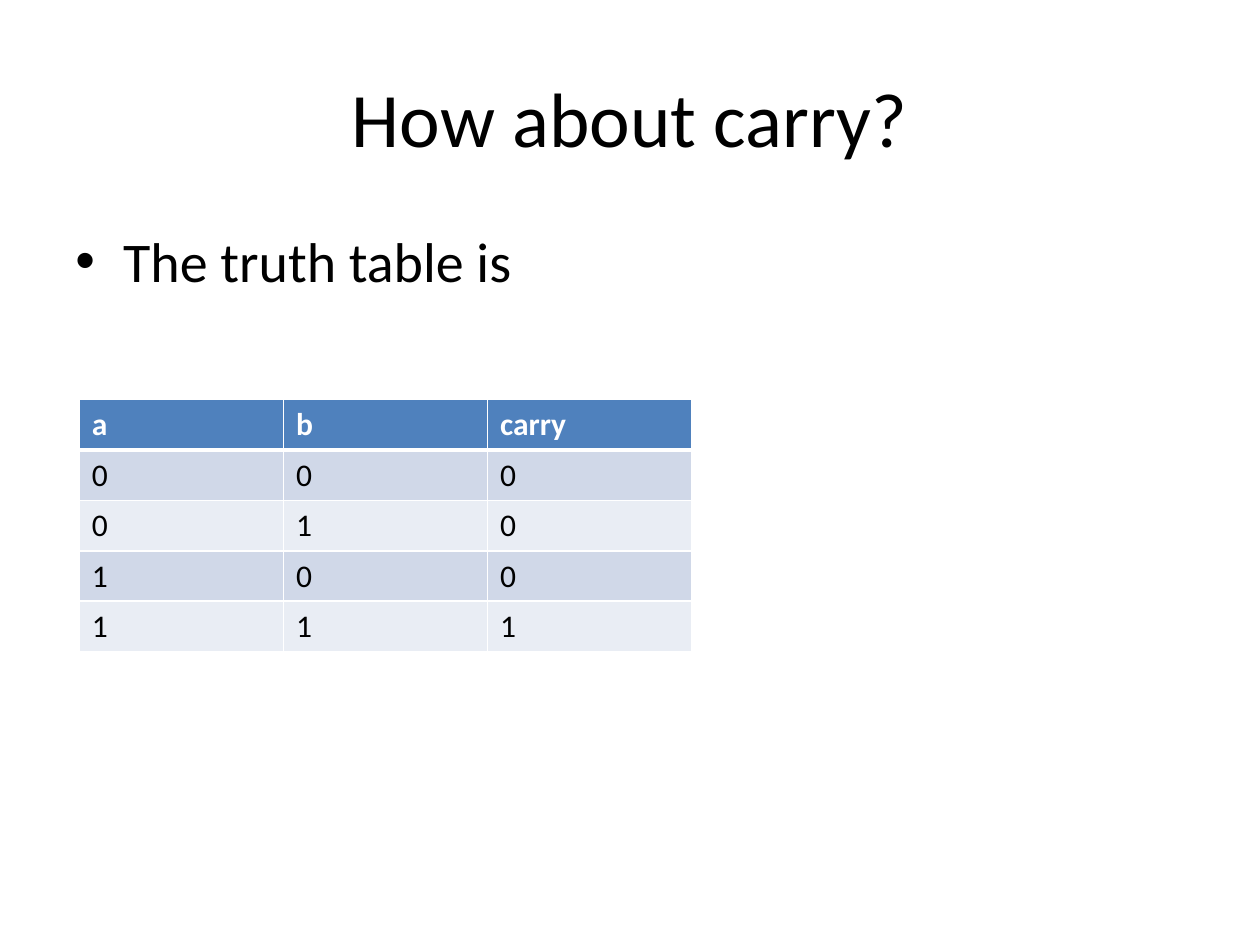
import lxml.etree
import pptx
import pptx.dml.color
import pptx.enum.text
import pptx.oxml.ns
import pptx.util

Inches = pptx.util.Inches
Pt = pptx.util.Pt
ALIGN = pptx.enum.text.PP_ALIGN
ANCHOR = pptx.enum.text.MSO_ANCHOR

COLORS = {
    "text": "000000",
    "white": "FFFFFF",
    "header": "4F81BD",
    "odd": "D0D8E8",
    "even": "E9EDF4",
}
FONT = "Calibri"
TRUTH_TABLE = [
    ("a", "b", "carry"),
    (0, 0, 0),
    (0, 1, 0),
    (1, 0, 0),
    (1, 1, 1),
]


class SlideBuilder:
    def __init__(self, page):
        self.page = page

    def color(self, name):
        return pptx.dml.color.RGBColor.from_string(COLORS[name])

    def style(self, target, formats):
        for name, value in formats.items():
            setattr(target, name, value)

    def child(self, parent, tag, **attributes):
        return lxml.etree.SubElement(parent, pptx.oxml.ns.qn(tag), attributes)

    def add_span(self, para, text, size, color="text", bold=False):
        span = para.add_run()
        span.text = str(text)
        self.style(span.font, {"name": FONT, "size": Pt(size), "bold": bold})
        span.font.color.rgb = self.color(color)

    def text_box(self, place, text, size, frame_format, para_format):
        box = self.page.shapes.add_textbox(*map(Inches, place))
        self.style(box.text_frame, {"word_wrap": True, **frame_format})
        para = box.text_frame.paragraphs[0]
        self.style(para, para_format)
        self.add_span(para, text, size)
        return para

    def title(self, text):
        self.text_box((0.5, 0.3, 9, 1.25), text, 44,
                      {"vertical_anchor": ANCHOR.MIDDLE}, {"alignment": ALIGN.CENTER})

    def bullet(self, text):
        para = self.text_box((0.5, 1.75, 9, 0.75), text, 32,
                             {"vertical_anchor": ANCHOR.TOP}, {"space_before": Pt(6.4)})
        properties = para._p.get_or_add_pPr()
        indent = Inches(0.38)
        properties.set("marL", str(indent))
        properties.set("indent", str(-indent))
        self.child(properties, "a:buFont", typeface="Arial")
        self.child(properties, "a:buChar", char="•")

    def borders(self, cell, widths):
        properties = cell._tc.get_or_add_tcPr()
        for side, width in widths.items():
            line = self.child(properties, f"a:ln{side}", w=str(Pt(width)))
            fill = self.child(line, "a:solidFill")
            self.child(fill, "a:srgbClr", val=COLORS["white"])

    def table(self, left, top, column_width, row_height, rows):
        count = len(rows[0])
        frame = self.page.shapes.add_table(
            len(rows), count, Inches(left), Inches(top),
            Inches(column_width * count), Inches(row_height * len(rows)))
        for i, values in enumerate(rows):
            header = i == 0
            band = "header" if header else "odd" if i % 2 else "even"
            widths = {"L": 1, "R": 1, "T": 3 if i == 1 else 1, "B": 3 if header else 1}
            for j, value in enumerate(values):
                cell = frame.table.cell(i, j)
                self.borders(cell, widths)
                cell.fill.solid()
                cell.fill.fore_color.rgb = self.color(band)
                self.add_span(cell.text_frame.paragraphs[0], value, 18,
                              "white" if header else "text", header)


def main():
    deck = pptx.Presentation()
    deck.slide_width = Inches(10)
    deck.slide_height = Inches(7.5)
    builder = SlideBuilder(deck.slides.add_slide(deck.slide_layouts[6]))
    builder.title("How about carry?")
    builder.bullet("The truth table is")
    builder.table(0.63, 3.17, 1.62, 0.4, TRUTH_TABLE)
    deck.save("out.pptx")


if __name__ == "__main__":
    main()
